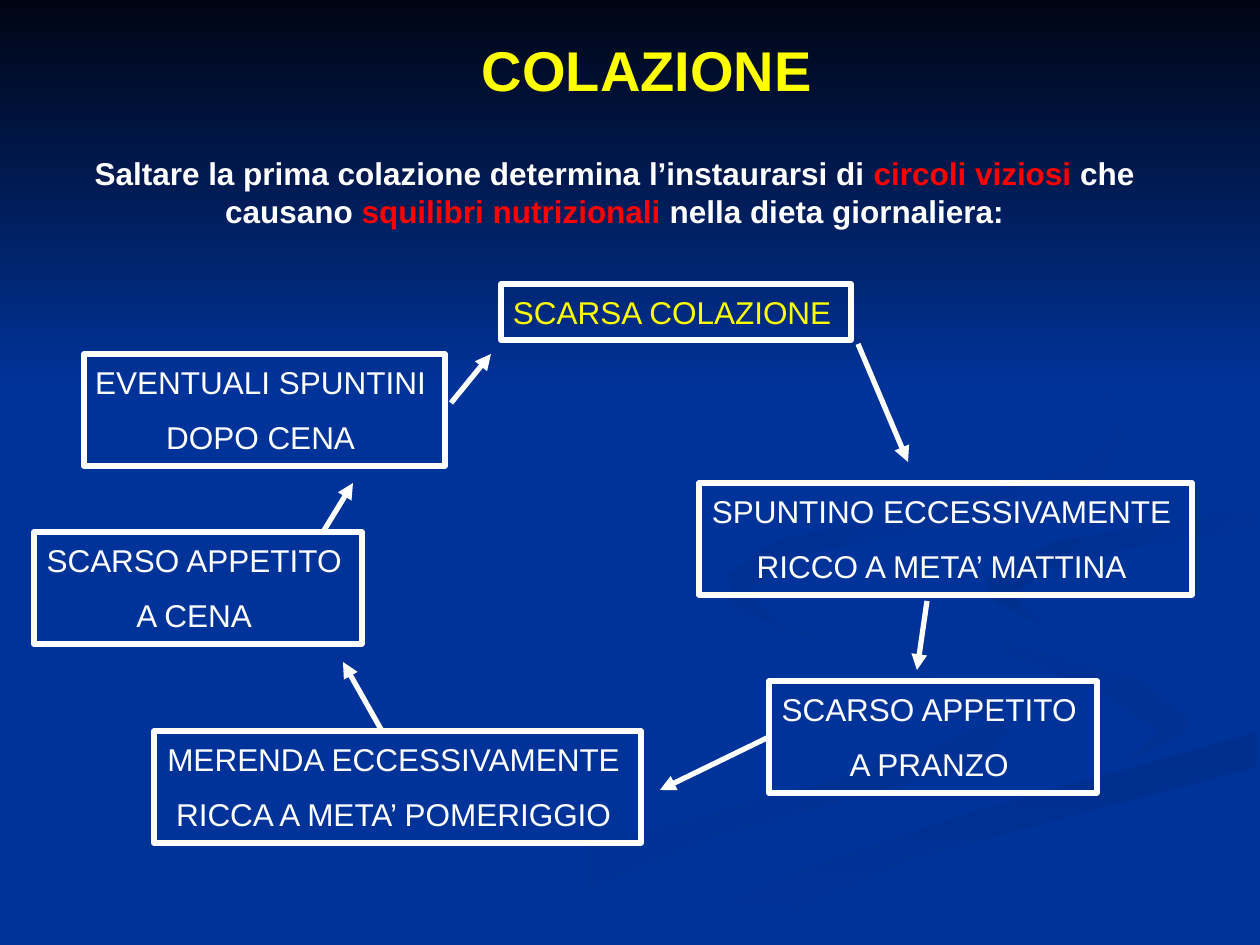
"""Build the COLAZIONE slide: the vicious circle caused by skipping breakfast."""
from lxml.etree import SubElement
from pptx import Presentation
from pptx.dml.color import RGBColor
from pptx.enum.shapes import MSO_CONNECTOR as LINE, MSO_SHAPE as SHAPE
from pptx.enum.text import MSO_ANCHOR as ANCHOR, PP_ALIGN as ALIGN
from pptx.oxml.ns import qn
from pptx.util import Pt

PX = 914400 / 126
BLUE = RGBColor(0x00, 0x33, 0x99)
SHADE = RGBColor(0x00, 0x2F, 0x8D)
SOFT_SHADE = RGBColor(0x00, 0x31, 0x93)
NIGHT = RGBColor(0x00, 0x05, 0x14)
WHITE = RGBColor(0xFF, 0xFF, 0xFF)
YELLOW = RGBColor(0xFF, 0xFF, 0x00)
RED = RGBColor(0xFF, 0x00, 0x00)


def paint_gradient(shape, first, last, angle):
    shape.shadow.inherit = False
    shape.line.fill.background()
    shape.fill.gradient()
    shape.fill.gradient_angle = (360 - angle) % 360
    for stop, color in zip(shape.fill.gradient_stops, (first, last)):
        stop.color.rgb = color


def write_line(para, runs, size=18, bold=False):
    para.alignment = ALIGN.CENTER
    for text, color in runs:
        span = para.add_run()
        span.text = text
        span.font.name = "Arial"
        span.font.size = Pt(size)
        span.font.bold = bold
        span.font.color.rgb = color


deck = Presentation()
deck.slide_width, deck.slide_height = round(1260 * PX), round(945 * PX)
page = deck.slides.add_slide(deck.slide_layouts[6])
page.background.fill.solid()
page.background.fill.fore_color.rgb = BLUE

swirls = [
    (BLUE, SOFT_SHADE, 0, [
        (984, 697), (859, 654), (748, 611), (723, 580), (732, 610), (960, 689), (987, 723),
        (900, 762), (577, 849), (378, 944), (455, 944), (711, 838), (983, 762), (1008, 732)]),
    (BLUE, SOFT_SHADE, 45, [
        (1188, 718), (1141, 680), (955, 627), (912, 585), (932, 622), (1109, 697),
        (1157, 732), (1126, 762), (1186, 732)]),
    (SHADE, BLUE, 90, [
        (634, 944), (719, 944), (910, 859), (1257, 767), (1257, 732), (963, 815), (794, 873)]),
    (SHADE, BLUE, 45, [
        (984, 580), (997, 602), (1041, 625), (1014, 595), (1044, 571), (1129, 548),
        (1257, 529), (1257, 507), (1052, 542)]),
    (SHADE, BLUE, 45, [
        (861, 542), (1040, 507), (1104, 476), (1126, 433), (1089, 367), (960, 294),
        (1104, 386), (1120, 422), (1085, 466), (961, 501), (775, 541), (728, 575),
        (736, 604), (784, 630), (747, 592), (786, 559)]),
]
for first, last, angle, points in swirls:
    builder = page.shapes.build_freeform(*points[0], scale=PX)
    builder.add_line_segments(points[1:], close=True)
    paint_gradient(builder.convert_to_shape(), first, last, angle)

sky = page.shapes.add_shape(SHAPE.RECTANGLE, 0, 0, deck.slide_width, round(388 * PX))
paint_gradient(sky, NIGHT, BLUE, 90)

headings = [
    ((34, 35, 1226, 68), ANCHOR.MIDDLE, 32, [("COLAZIONE", YELLOW)]),
    ((54, 148, 1121, 88), ANCHOR.TOP, 18, [
        ("Saltare la prima colazione determina l’instaurarsi di ", WHITE),
        ("circoli viziosi", RED),
        (" che causano ", WHITE),
        ("squilibri nutrizionali", RED),
        (" nella dieta giornaliera:", WHITE)]),
]
for place, anchor, size, runs in headings:
    box = page.shapes.add_textbox(*(round(value * PX) for value in place))
    box.text_frame.word_wrap = True
    box.text_frame.vertical_anchor = anchor
    write_line(box.text_frame.paragraphs[0], runs, size, True)

stages = [
    (501, 284, 350, YELLOW, ["SCARSA COLAZIONE"]),
    (699, 483, 493, WHITE, ["SPUNTINO ECCESSIVAMENTE", "RICCO A META’ MATTINA"]),
    (769, 681, 328, WHITE, ["SCARSO APPETITO", "A PRANZO"]),
    (154, 731, 487, WHITE, ["MERENDA ECCESSIVAMENTE", "RICCA A META’ POMERIGGIO"]),
    (34, 532, 328, WHITE, ["SCARSO APPETITO", "A CENA"]),
    (84, 354, 361, WHITE, ["EVENTUALI SPUNTINI", "DOPO CENA"]),
]
stage_boxes = []
for left, top, width, color, lines in stages:
    place = (left, top, width, 56 * len(lines))
    box = page.shapes.add_shape(SHAPE.RECTANGLE, *(round(value * PX) for value in place))
    box.shadow.inherit = False
    box.fill.background()
    box.line.color.rgb = WHITE
    box.line.width = Pt(3)
    frame = box.text_frame
    frame.word_wrap = False
    frame.vertical_anchor = ANCHOR.TOP
    frame.margin_top, frame.margin_right = round(9 * PX), round(20 * PX)
    for index, text in enumerate(lines):
        para = frame.add_paragraph() if index else frame.paragraphs[0]
        para.space_before = Pt(9.6 if index else 0)
        write_line(para, [(text, color)])
    stage_boxes.append(box)

lunch = stage_boxes[2]
arrows = [
    ((858, 344, 908, 462), None),
    ((927, 601, 917, 670), None),
    ((769, 737, 660, 790), lunch),
    ((382, 731, 343, 662), None),
    ((323, 532, 353, 483), None),
    ((451, 403, 491, 354), None),
]
for ends, source in arrows:
    arrow = page.shapes.add_connector(LINE.STRAIGHT, *(round(value * PX) for value in ends))
    if source:
        arrow.begin_connect(source, 1)
    arrow.line.color.rgb = WHITE
    arrow.line.width = Pt(3)
    SubElement(arrow.get_or_add_ln(), qn("a:tailEnd"), type="triangle")
    SubElement(arrow._element.spPr, qn("a:effectLst"))

deck.save("out.pptx")
